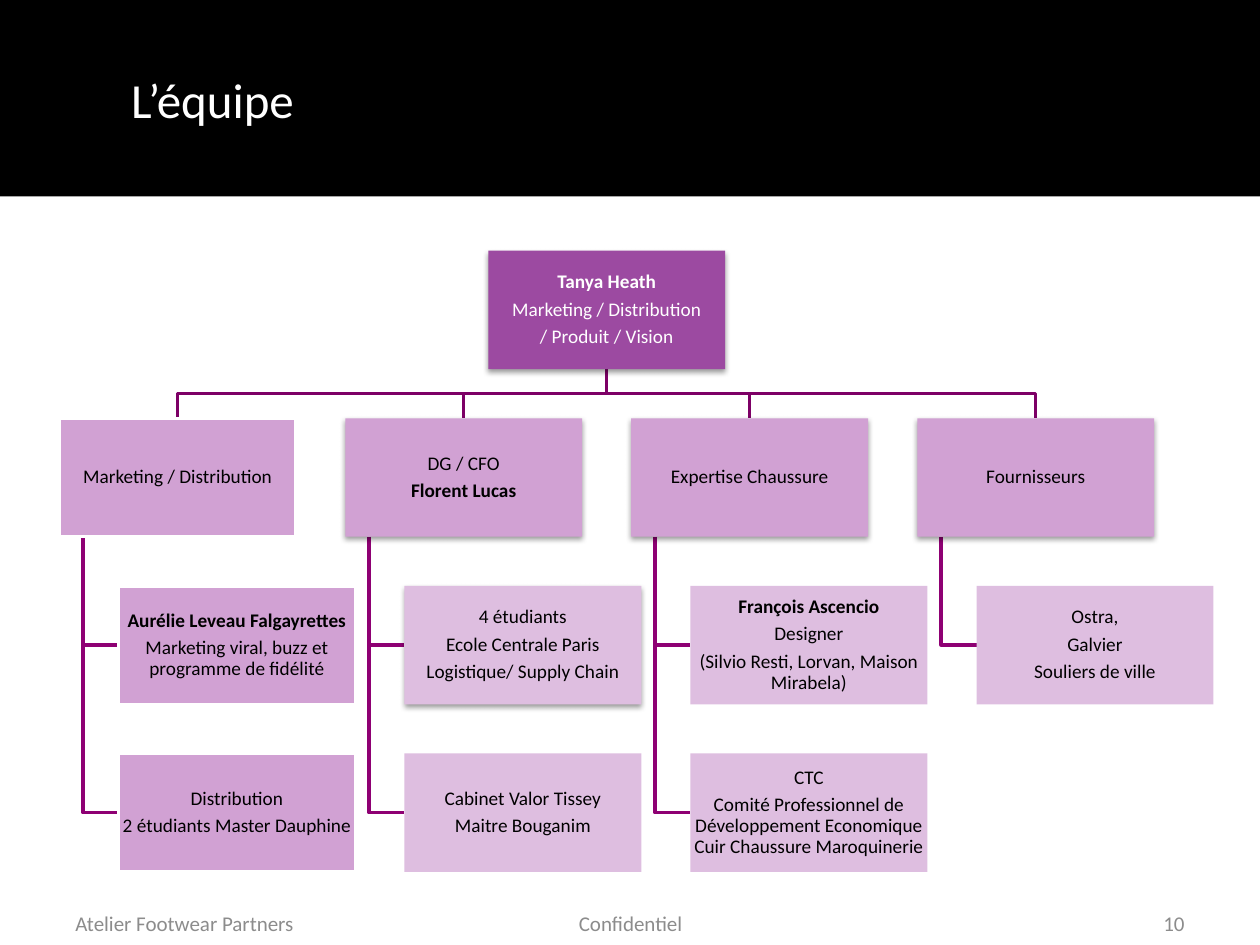
from dataclasses import dataclass

import pptx
import pptx.dml.color
import pptx.enum.shapes
import pptx.enum.text
import pptx.oxml
import pptx.oxml.ns
import pptx.util

ALIGN = pptx.enum.text.PP_ALIGN
MIDDLE = pptx.enum.text.MSO_ANCHOR.MIDDLE
RECTANGLE = pptx.enum.shapes.MSO_SHAPE.RECTANGLE
Inches = pptx.util.Inches
Pt = pptx.util.Pt


@dataclass(frozen=True)
class Theme:
    font: str = "Calibri"
    black: str = "000000"
    white: str = "FFFFFF"
    grey: str = "8C8C8C"
    leader: str = "9C4AA1"
    branch: str = "D1A1D3"
    member: str = "DEBEE0"
    main_line: str = "7D0066"
    side_line: str = "8E0073"
    title_size: float = 28
    footer_size: float = 12
    box_size: float = 11
    line_width: float = 2


@dataclass(frozen=True)
class Grid:
    """Chart grid in inches; boxes are placed by column, row and indent."""
    left: float = 0.47
    top: float = 1.99
    column: float = 2.27
    row: float = 1.33
    width: float = 1.88
    height: float = 0.94
    indent: float = 0.47
    stem: float = 0.19

    def x(self, column: float) -> float:
        return self.left + column * self.column

    def y(self, row: float) -> float:
        return self.top + row * self.row


@dataclass(frozen=True)
class Box:
    """Text lines of a box; a line that starts with * is bold."""
    lines: tuple[str, ...]
    fill: str
    shadow: bool = False
    outline: bool = False
    ink: str = Theme.black


@dataclass(frozen=True)
class Branch:
    head: Box
    members: tuple[Box, ...]


@dataclass(frozen=True)
class Footer:
    text: str
    left: float
    width: float
    align: ALIGN


THEME = Theme()
GRID = Grid()
WIDTH, HEIGHT = 10, 7.5

LEADER = Box(("*Tanya Heath", "Marketing / Distribution", "/ Produit / Vision"),
             THEME.leader, shadow=True, ink=THEME.white)
BRANCHES = (
    Branch(Box(("Marketing / Distribution",), THEME.branch, outline=True), (
        Box(("*Aurélie Leveau Falgayrettes",
             "Marketing viral, buzz et programme de fidélité"),
            THEME.branch, outline=True),
        Box(("Distribution", "2 étudiants Master Dauphine"),
            THEME.branch, outline=True))),
    Branch(Box(("DG / CFO", "*Florent Lucas"), THEME.branch, shadow=True), (
        Box(("4 étudiants", "Ecole Centrale Paris", "Logistique/ Supply Chain"),
            THEME.member, shadow=True),
        Box(("Cabinet Valor Tissey", "Maitre Bouganim"), THEME.member))),
    Branch(Box(("Expertise Chaussure",), THEME.branch, shadow=True), (
        Box(("*François Ascencio", "Designer",
             "(Silvio Resti, Lorvan, Maison Mirabela)"), THEME.member),
        Box(("CTC", "Comité Professionnel de Développement Economique "
                    "Cuir Chaussure Maroquinerie"), THEME.member))),
    Branch(Box(("Fournisseurs",), THEME.branch, shadow=True), (
        Box(("Ostra,", "Galvier", "Souliers de ville"), THEME.member),)),
)
FOOTERS = (
    Footer("Atelier Footwear Partners", 0.05, 0.233, ALIGN.LEFT),
    Footer("Confidentiel", 0.342, 0.317, ALIGN.CENTER),
    Footer("10", 0.717, 0.233, ALIGN.RIGHT),
)


def rgb(value: str) -> pptx.dml.color.RGBColor:
    return pptx.dml.color.RGBColor.from_string(value)


def set_all(target, values: dict) -> None:
    for name, value in values.items():
        setattr(target, name, value)


def write(paragraph, text: str, size: float, color: str, align, bold=False) -> None:
    paragraph.alignment = align
    run = paragraph.add_run()
    run.text = text
    set_all(run.font, {"name": THEME.font, "size": Pt(size), "bold": bold})
    run.font.color.rgb = rgb(color)


def add_rectangle(slide, left: float, top: float, width: float, height: float, fill: str):
    shape = slide.shapes.add_shape(
        RECTANGLE, Inches(left), Inches(top), Inches(width), Inches(height))
    shape.shadow.inherit = False
    shape.fill.solid()
    shape.fill.fore_color.rgb = rgb(fill)
    shape.line.fill.background()
    return shape


def add_soft_shadow(shape) -> None:
    effects = shape.element.spPr.find(pptx.oxml.ns.qn("a:effectLst"))
    effects.append(pptx.oxml.parse_xml(
        f'<a:outerShdw {pptx.oxml.ns.nsdecls("a")} blurRad="{Pt(3.1)}" dist="{Pt(1.6)}" '
        'dir="5400000" rotWithShape="0"><a:srgbClr val="000000">'
        '<a:alpha val="38000"/></a:srgbClr></a:outerShdw>'))


def add_box(slide, box: Box, left: float, top: float) -> None:
    shape = add_rectangle(slide, left, top, GRID.width, GRID.height, box.fill)
    if box.shadow:
        add_soft_shadow(shape)
    if box.outline:
        shape.line.color.rgb = rgb(THEME.white)
        shape.line.width = Pt(THEME.line_width)
    frame = shape.text_frame
    margins = ("margin_left", "margin_right", "margin_top", "margin_bottom")
    set_all(frame, {"word_wrap": True, "vertical_anchor": MIDDLE,
                    **dict.fromkeys(margins, Inches(0.01))})
    for index, line in enumerate(box.lines):
        paragraph = frame.add_paragraph() if index else frame.paragraphs[0]
        set_all(paragraph, {"line_spacing": 0.9, "space_after": Pt(0.35 * THEME.box_size)})
        write(paragraph, line.removeprefix("*"), THEME.box_size, box.ink,
              ALIGN.CENTER, line.startswith("*"))


def add_elbow(slide, points: list[tuple[float, float]], color: str) -> None:
    start, *others = [(Inches(x), Inches(y)) for x, y in points]
    builder = slide.shapes.build_freeform(*start)
    builder.add_line_segments(others, close=False)
    shape = builder.convert_to_shape()
    shape.shadow.inherit = False
    shape.fill.background()
    shape.line.color.rgb = rgb(color)
    shape.line.width = Pt(THEME.line_width)


def add_title(slide) -> None:
    title = slide.shapes.title
    set_all(title, {"left": Inches(0.94), "top": Inches(0.16),
                    "width": Inches(8.59), "height": Inches(1.25)})
    title.text_frame.vertical_anchor = MIDDLE
    write(title.text_frame.paragraphs[0], "L’équipe", THEME.title_size,
          THEME.white, ALIGN.LEFT)
    band = add_rectangle(slide, 0, 0, WIDTH, 1.56, THEME.black)
    title.element.addprevious(band.element)


def add_footer(slide, footer: Footer) -> None:
    shape = slide.shapes.add_textbox(
        Inches(footer.left * WIDTH), Inches(0.95 * HEIGHT),
        Inches(footer.width * WIDTH), Inches(0.4))
    set_all(shape.text_frame, {"word_wrap": True, "vertical_anchor": MIDDLE})
    write(shape.text_frame.paragraphs[0], footer.text, THEME.footer_size,
          THEME.grey, footer.align)


def add_branch_lines(slide, column: int, branch: Branch) -> None:
    left, top = GRID.x(column), GRID.y(1)
    center, leader_center = (GRID.x(c) + GRID.width / 2 for c in (column, 1.5))
    leader_bottom = GRID.y(0) + GRID.height
    middle = (leader_bottom + top) / 2
    stem = left + GRID.stem
    for row in range(len(branch.members) + 1, 1, -1):
        member_middle = GRID.y(row) + GRID.height / 2
        add_elbow(slide, [(stem, top + GRID.height), (stem, member_middle),
                          (left + GRID.indent, member_middle)], THEME.side_line)
    add_elbow(slide, [(leader_center, leader_bottom), (leader_center, middle),
                      (center, middle), (center, top)], THEME.main_line)


def main() -> None:
    presentation = pptx.Presentation()
    set_all(presentation, {"slide_width": Inches(WIDTH), "slide_height": Inches(HEIGHT)})
    slide = presentation.slides.add_slide(presentation.slide_layouts.get_by_name("Title Only"))
    add_title(slide)
    for footer in FOOTERS:
        add_footer(slide, footer)
    for column, branch in enumerate(BRANCHES):
        add_branch_lines(slide, column, branch)
    add_box(slide, LEADER, GRID.x(1.5), GRID.y(0))
    for column, branch in enumerate(BRANCHES):
        add_box(slide, branch.head, GRID.x(column), GRID.y(1))
        for row, member in enumerate(branch.members, start=2):
            add_box(slide, member, GRID.x(column) + GRID.indent, GRID.y(row))
    presentation.save("out.pptx")


if __name__ == "__main__":
    main()
